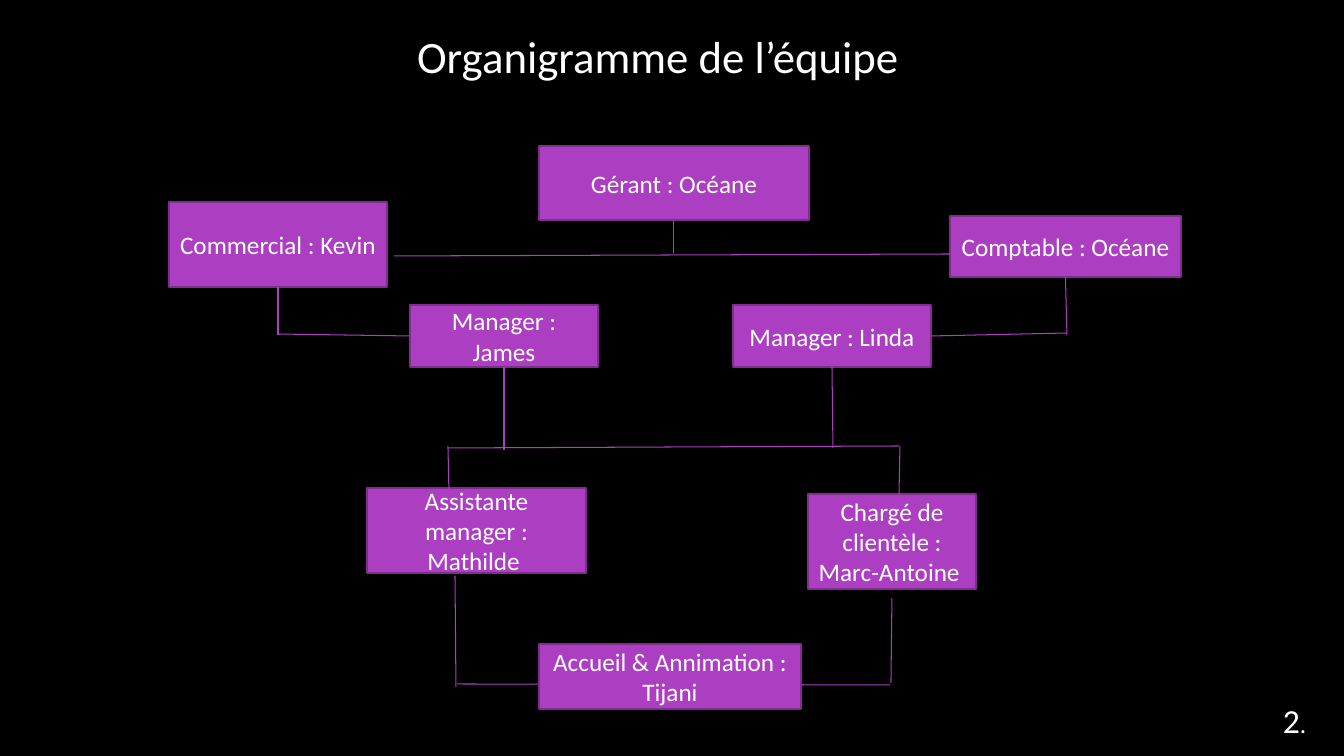
from pptx import Presentation
from pptx.dml.color import RGBColor
from pptx.enum.shapes import MSO_CONNECTOR, MSO_SHAPE
from pptx.enum.text import MSO_ANCHOR as Anchor, PP_ALIGN as Align
from pptx.oxml.ns import qn
from pptx.util import Pt
from lxml.etree import SubElement

EMU_PER_PX = 12192000 / 1344
BLACK = RGBColor(0x00, 0x00, 0x00)
WHITE = RGBColor(0xFF, 0xFF, 0xFF)
PURPLE = RGBColor(0xAC, 0x3E, 0xC1)
DARK_PURPLE = RGBColor(0x7F, 0x2E, 0x8F)
TOP, LEFT, BOTTOM, RIGHT = range(4)
TITLE_ONLY = 5


def px(*lengths):
    return [round(length * EMU_PER_PX) for length in lengths]


class OrgChart:
    font_name = "Calibri"

    def __init__(self, presentation):
        self.slide = presentation.slides.add_slide(presentation.slide_layouts[TITLE_ONLY])
        self.slide.background.fill.solid()
        self.slide.background.fill.fore_color.rgb = BLACK

    def style(self, font, size):
        font.name = self.font_name
        font.size = Pt(size)
        font.color.rgb = WHITE

    def title(self, text, *bounds):
        shape = self.slide.shapes.title
        shape.left, shape.top, shape.width, shape.height = px(*bounds)
        frame = shape.text_frame
        frame.text = text
        frame.vertical_anchor = Anchor.TOP
        frame.paragraphs[0].alignment = Align.CENTER
        self.style(frame.paragraphs[0].font, 32)

    def box(self, text, *bounds):
        shape = self.slide.shapes.add_shape(MSO_SHAPE.RECTANGLE, *px(*bounds))
        shape.shadow.inherit = False
        shape.fill.solid()
        shape.fill.fore_color.rgb = PURPLE
        shape.line.color.rgb = DARK_PURPLE
        shape.line.width = Pt(1.5)
        frame = shape.text_frame
        frame.word_wrap = True
        frame.vertical_anchor = Anchor.MIDDLE
        frame.text = text
        frame.paragraphs[0].alignment = Align.CENTER
        self.style(frame.paragraphs[0].font, 18)
        return shape

    def line(self, *ends, start=None):
        connector = self.slide.shapes.add_connector(MSO_CONNECTOR.STRAIGHT, *px(*ends))
        connector.line.color.rgb = PURPLE
        connector.line.width = Pt(0.75)
        SubElement(connector._element.spPr, qn("a:effectLst"))
        if start:
            connector.begin_connect(*start)

    def page_number(self, runs, *bounds):
        frame = self.slide.shapes.add_textbox(*px(*bounds)).text_frame
        frame.word_wrap = False
        for text, size in runs:
            run = frame.paragraphs[0].add_run()
            run.text = text
            self.style(run.font, size)


def main():
    presentation = Presentation()
    presentation.slide_width, presentation.slide_height = px(1344, 756)
    chart = OrgChart(presentation)

    chart.title("Organigramme de l’équipe ", 319, 24, 688, 65)
    chart.line(457, 684, 890, 685)

    owner = chart.box("Gérant : Océane", 539, 146, 270, 74)
    sales = chart.box("Commercial : Kevin", 169, 202, 218, 85)
    accountant = chart.box("Comptable : Océane", 950, 216, 231, 61)
    james = chart.box("Manager : James", 410, 305, 188, 62)
    linda = chart.box("Manager : Linda", 733, 305, 198, 62)
    chart.box("Assistante manager : Mathilde ", 367, 488, 219, 85)
    chart.box("Chargé de clientèle : Marc-Antoine ", 808, 494, 168, 95)
    chart.box("Accueil & Annimation : Tijani", 539, 644, 262, 65)

    for box, side, ends in [
        (owner, BOTTOM, (674, 220, 674, 253)),
        (sales, BOTTOM, (278, 287, 278, 335)),
        (accountant, BOTTOM, (1066, 277, 1067, 335)),
        (james, LEFT, (410, 336, 278, 334)),
        (linda, RIGHT, (931, 336, 1067, 333)),
        (james, BOTTOM, (504, 367, 504, 450)),
        (linda, BOTTOM, (832, 367, 833, 448)),
    ]:
        chart.line(*ends, start=(box, side))

    for ends in [
        (394, 256, 950, 254),
        (449, 448, 899, 446),
        (448, 446, 449, 494),
        (900, 446, 899, 495),
        (455, 576, 456, 687),
        (891, 683, 892, 598),
    ]:
        chart.line(*ends)

    chart.page_number([("2", 24), (".", 18)], 1273, 695, 44, 50)
    presentation.save("out.pptx")


if __name__ == "__main__":
    main()
